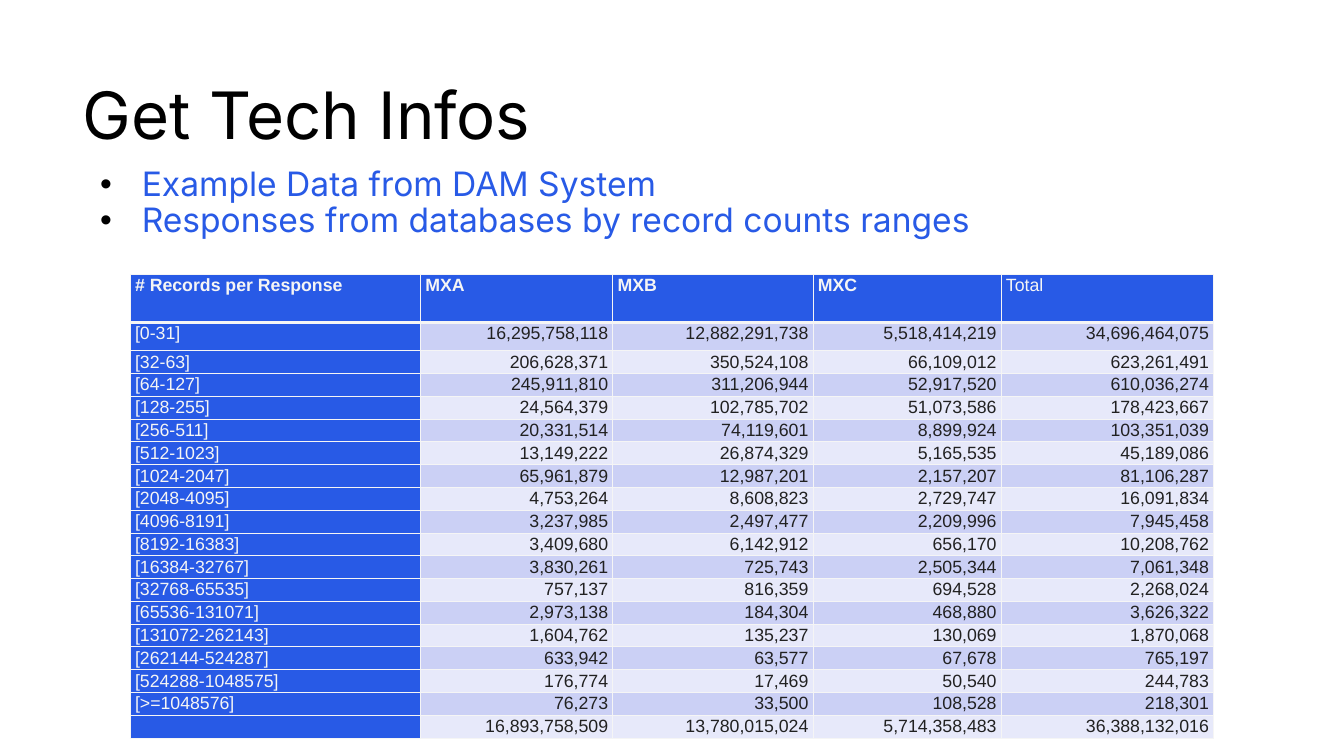
from dataclasses import dataclass

from lxml.etree import SubElement
from pptx import Presentation
from pptx.dml.color import RGBColor
from pptx.enum.text import MSO_ANCHOR, PP_ALIGN
from pptx.oxml.ns import qn
from pptx.util import Inches, Pt


@dataclass(frozen=True)
class Theme:
    blue: str = "285AE6"
    black: str = "000000"
    light: str = "F5F5F5"
    dark: str = "212121"
    bands: tuple = ("E7E9FA", "CBD0F5")
    text_font: str = "Inter"
    table_font: str = "Arial"
    title_size: int = 70
    bullet_size: int = 36
    table_size: int = 19


THEME = Theme()

HEADINGS = ("# Records per Response", "MXA", "MXB", "MXC", "Total")
RESPONSES = (
    ("[0-31]", 16295758118, 12882291738, 5518414219, 34696464075),
    ("[32-63]", 206628371, 350524108, 66109012, 623261491),
    ("[64-127]", 245911810, 311206944, 52917520, 610036274),
    ("[128-255]", 24564379, 102785702, 51073586, 178423667),
    ("[256-511]", 20331514, 74119601, 8899924, 103351039),
    ("[512-1023]", 13149222, 26874329, 5165535, 45189086),
    ("[1024-2047]", 65961879, 12987201, 2157207, 81106287),
    ("[2048-4095]", 4753264, 8608823, 2729747, 16091834),
    ("[4096-8191]", 3237985, 2497477, 2209996, 7945458),
    ("[8192-16383]", 3409680, 6142912, 656170, 10208762),
    ("[16384-32767]", 3830261, 725743, 2505344, 7061348),
    ("[32768-65535]", 757137, 816359, 694528, 2268024),
    ("[65536-131071]", 2973138, 184304, 468880, 3626322),
    ("[131072-262143]", 1604762, 135237, 130069, 1870068),
    ("[262144-524287]", 633942, 63577, 67678, 765197),
    ("[524288-1048575]", 176774, 17469, 50540, 244783),
    ("[>=1048576]", 76273, 33500, 108528, 218301),
    ("", 16893758509, 13780015024, 5714358483, 36388132016),
)
COLUMN_WIDTHS = (4.32, 2.86, 2.98, 2.8, 3.16)
HEADER_HEIGHT, FIRST_HEIGHT, OTHER_HEIGHTS = 0.72, 0.42, 5.38


def style_font(font, name, size, color, bold=False):
    font.name = name
    font.size = Pt(size)
    font.bold = bold
    font.color.rgb = RGBColor.from_string(color)


def add_text_frame(slide, top, height):
    """Add a full-width text box without margins and return its frame."""
    box = slide.shapes.add_textbox(Inches(1.23), Inches(top), Inches(17.54), Inches(height))
    frame = box.text_frame
    frame.word_wrap = True
    frame.vertical_anchor = MSO_ANCHOR.TOP
    frame.margin_left = frame.margin_right = frame.margin_top = frame.margin_bottom = 0
    return frame


prs = Presentation()
prs.slide_width, prs.slide_height = Inches(20), Inches(11.25)
slide = prs.slides.add_slide(prs.slide_layouts[6])

# Title
title = add_text_frame(slide, 1.24, 1.25).paragraphs[0]
title.text = "Get Tech Infos"
title.line_spacing = 0.9
style_font(title.font, THEME.text_font, THEME.title_size, THEME.black)

# Bullets
points = add_text_frame(slide, 2.49, 7.53)
points.text = "Example Data from DAM System\nResponses from databases by record counts ranges"
for point in points.paragraphs:
    point.line_spacing = 0.9
    props = point._p.get_or_add_pPr()
    props.set("marL", str(Inches(0.88)))
    props.set("indent", str(Inches(-0.62)))
    bullet_color = SubElement(props, qn("a:buClr"))
    SubElement(bullet_color, qn("a:srgbClr"), val=THEME.black)
    SubElement(props, qn("a:buFont"), typeface="Arial")
    SubElement(props, qn("a:buChar"), char="•")
    style_font(point.font, THEME.text_font, THEME.bullet_size, THEME.blue)

# Response counts
rows = (HEADINGS, *RESPONSES)
table = slide.shapes.add_table(
    len(rows), len(HEADINGS), Inches(1.94), Inches(4.08),
    Inches(sum(COLUMN_WIDTHS)), Inches(HEADER_HEIGHT + FIRST_HEIGHT + OTHER_HEIGHTS),
).table
for column, width in zip(table.columns, COLUMN_WIDTHS):
    column.width = Inches(width)
other_height = OTHER_HEIGHTS / (len(rows) - 2)
row_heights = [HEADER_HEIGHT, FIRST_HEIGHT] + [other_height] * (len(rows) - 2)

for r, (values, height) in enumerate(zip(rows, row_heights)):
    table.rows[r].height = Inches(height)
    for c, value in enumerate(values):
        cell = table.cell(r, c)
        is_count = r > 0 and c > 0
        cell.margin_left = cell.margin_right = Inches(0.07)
        cell.margin_top = cell.margin_bottom = 0

        line_widths = {"lnL": 1, "lnR": 1, "lnT": 3 if r == 1 else 1, "lnB": 3 if r == 0 else 1}
        cell_props = cell._tc.get_or_add_tcPr()
        for side, line_width in line_widths.items():
            border = SubElement(cell_props, qn(f"a:{side}"), w=str(Pt(line_width)))
            border_fill = SubElement(border, qn("a:solidFill"))
            SubElement(border_fill, qn("a:srgbClr"), val=THEME.light)
        cell.fill.solid()
        cell.fill.fore_color.rgb = RGBColor.from_string(
            THEME.bands[r % 2] if is_count else THEME.blue)

        entry = cell.text_frame.paragraphs[0]
        if value != "":
            entry.text = f"{value:,}" if is_count else value
        entry.line_spacing = 1.07
        entry.alignment = PP_ALIGN.RIGHT if is_count else PP_ALIGN.LEFT
        style_font(entry.font, THEME.table_font, THEME.table_size,
                   THEME.dark if is_count else THEME.light,
                   bold=r == 0 and value != "Total")

prs.save("out.pptx")
